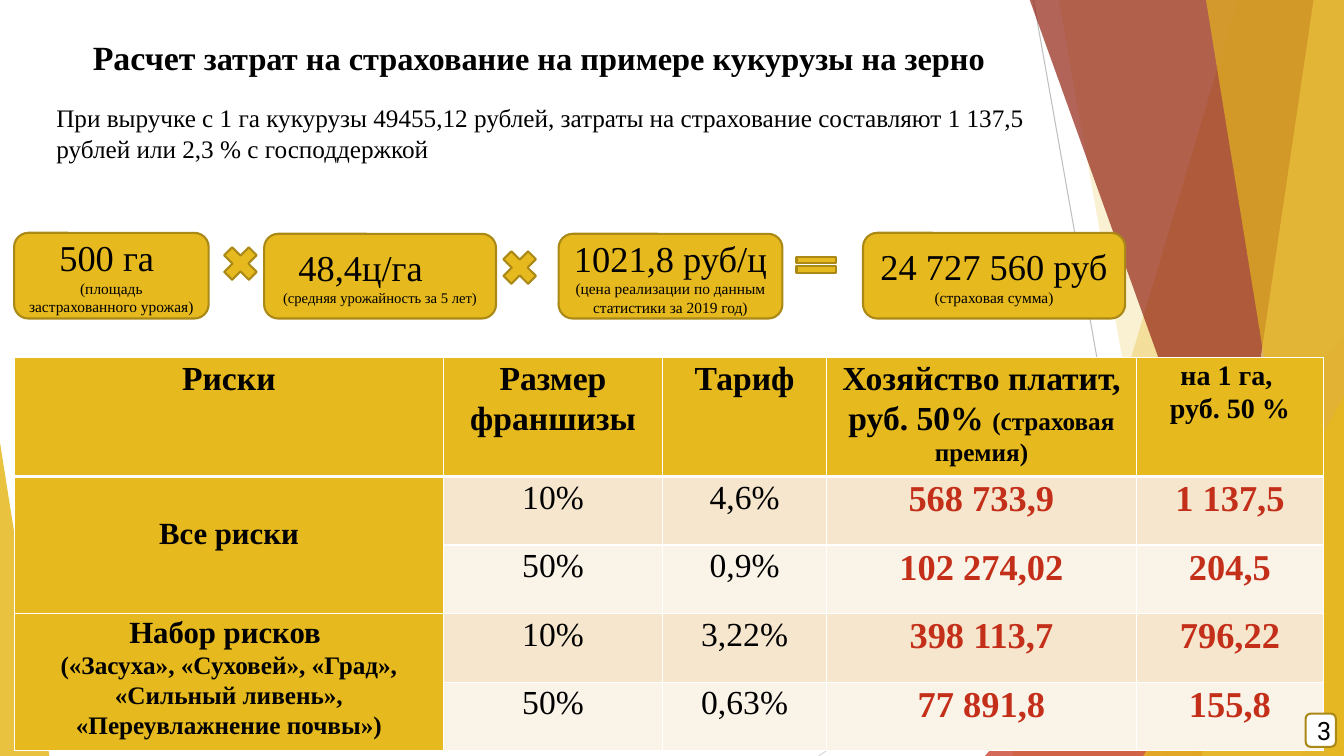
from lxml import etree
from pptx import Presentation
from pptx.dml.color import RGBColor
from pptx.enum.shapes import MSO_CONNECTOR, MSO_SHAPE
from pptx.enum.text import MSO_ANCHOR, PP_ALIGN
from pptx.oxml.ns import qn
from pptx.util import Inches, Pt

# Content
GOLD, DARK_GOLD, RED, BLACK, WHITE = "E6B91E", "AA8916", "C42F1A", "000000", "FFFFFF"
SERIF = "Times New Roman"
TOP, BOTTOM, RIGHT = -0.01, 7.5, 13.33

lines = [((10.25, 0), (11.58, 7.5), "BFBFBF"), ((13.33, 4.03), (8.12, 7.5), "D9D9D9")]
# Bands reach the right edge: (top x, bottom x, colour, opacity);
# triangles: (left, top, width, height, apex, colour, opacity)
decorations = [
    ("band", (12.28, 10.04, GOLD, 30)),
    ("band", (10.5, 11.83, GOLD, 20)),
    ("triangle", (9.77, 3.33, 3.56, 4.17, 1, RED, 72)),
    ("band", (10.21, 12.91, "932313", 70)),
    ("band", (13.03, 11.92, "F0D578", 70)),
    ("band", (11.96, 13.18, GOLD, 65)),
    ("triangle", (11.34, 3.93, 1.99, 3.57, 1, GOLD, 80)),
    ("triangle", (0, 4.39, 0.49, 3.11, 0, GOLD, 85)),
]

# Paragraphs are lists of (text, size, bold, colour)
summary = [[("При выручке с 1 га кукурузы 49455,12 рублей, затраты на страхование "
             "составляют 1 137,5 рублей или 2,3 % с господдержкой", 18, False, BLACK)]]
heading = [[("Расчет", 24.2, True, BLACK),
            (" затрат на страхование на примере кукурузы на зерно ", 23.1, True, BLACK)]]

factors = [
    ((0.14, 2.31, 1.93, 0.85), [[("500 га ", 26, False, BLACK)],
                                [("(площадь застрахованного урожая)", 11, False, BLACK)]]),
    ((2.62, 2.32, 2.3, 0.84), [[("48,4ц/га", 26, False, BLACK)],
                               [("(средняя урожайность за 5 лет)", 10.5, False, BLACK)]]),
    ((5.54, 2.32, 2.22, 0.84), [[("1021,8 руб/ц ", 26, False, BLACK),
                                 ("(цена реализации по данным статистики за 2019 год)",
                                  11, False, BLACK)]]),
    ((8.56, 2.31, 2.6, 0.85), [[("24 727 560 руб ", 26, False, BLACK),
                                ("(страховая сумма)", 11, False, BLACK)]]),
]
operators = [
    (MSO_SHAPE.MATH_EQUAL, (7.83, 2.49, 0.53, 0.27)),
    (MSO_SHAPE.MATH_MULTIPLY, (4.92, 2.42, 0.47, 0.47)),
    (MSO_SHAPE.MATH_MULTIPLY, (2.15, 2.38, 0.47, 0.47)),
]

column_widths = [4.26, 2.17, 1.63, 3.07, 1.86]
row_heights = [0.93] + [0.68] * 4
header = [
    [[("Риски", 24, True, BLACK)]],
    [[("Размер франшизы", 24, True, BLACK)]],
    [[("Тариф", 24, True, BLACK)]],
    [[("Хозяйство платит, руб. 50% ", 24, True, BLACK),
      ("(страховая премия)", 18, True, BLACK)]],
    [[("на 1 га, ", 20, True, BLACK)], [("руб. 50 %", 20, True, BLACK)]],
]
risks = [
    (0.38, [[("Все риски", 22, True, BLACK)]]),
    (0, [[("Набор рисков ", 22, True, BLACK)],
         [("(«Засуха», «Суховей», «Град», «Сильный ливень», «Переувлажнение почвы»)",
           18, True, BLACK)]]),
]
rates = [
    ("10%", "4,6%", "568 733,9", "1 137,5"),
    ("50%", "0,9%", "102 274,02", "204,5"),
    ("10%", "3,22%", "398 113,7", "796,22"),
    ("50%", "0,63%", "77 891,8", "155,8"),
]
row_fills = ["F5E6CD", "FAF3E8"]


# Helpers
def color(value):
    return RGBColor.from_string(value)


def place(values):
    return [Inches(value) for value in values]


def paint(shape, fill, line=None, opacity=100):
    shape.shadow.inherit = False
    shape.fill.solid()
    shape.fill.fore_color.rgb = color(fill)
    if opacity < 100:
        tint = shape.fill._xPr.find(qn("a:solidFill"))[0]
        etree.SubElement(tint, qn("a:alpha")).set("val", str(opacity * 1000))
    if line:
        shape.line.color.rgb = color(line)
        shape.line.width = Pt(1.5)
    else:
        shape.line.fill.background()


def write(frame, paragraphs, align=PP_ALIGN.CENTER, spacing=None, font=SERIF):
    frame.word_wrap = True
    for index, spans in enumerate(paragraphs):
        para = frame.paragraphs[0] if index == 0 else frame.add_paragraph()
        para.alignment = align
        if spacing:
            para.line_spacing = spacing
        for text, size, bold, ink in spans:
            span = para.add_run()
            span.text = text
            for name, value in {"name": font, "size": Pt(size), "bold": bold}.items():
                setattr(span.font, name, value)
            span.font.color.rgb = color(ink)


def add_text(position, paragraphs, align):
    box = page.shapes.add_textbox(*place(position))
    write(box.text_frame, paragraphs, align)


def add_box(position, fill, paragraphs, font=SERIF):
    box = page.shapes.add_shape(MSO_SHAPE.ROUNDED_RECTANGLE, *place(position))
    paint(box, fill, DARK_GOLD)
    box.text_frame.vertical_anchor = MSO_ANCHOR.MIDDLE
    write(box.text_frame, paragraphs, font=font)
    return box


def fill_cell(row, column, fill, paragraphs, top=0):
    cell = table.cell(row, column)
    margins = {"margin_left": 0.07, "margin_right": 0.07, "margin_top": top, "margin_bottom": 0}
    for name, value in margins.items():
        setattr(cell, name, Inches(value))
    properties = cell._tc.get_or_add_tcPr()
    for side in "LRTB":
        thick = (row, side) in ((0, "B"), (1, "T"))
        border = etree.SubElement(properties, qn(f"a:ln{side}"), w=str(Pt(3 if thick else 1)))
        solid = etree.SubElement(border, qn("a:solidFill"))
        etree.SubElement(solid, qn("a:srgbClr"), val=WHITE)
    cell.fill.solid()
    cell.fill.fore_color.rgb = color(fill)
    if paragraphs:
        write(cell.text_frame, paragraphs, spacing=1.07)


deck = Presentation()
deck.slide_width, deck.slide_height = Inches(13.33), Inches(7.5)
page = deck.slides.add_slide(deck.slide_layouts[6])

# Background facets
for start, end, ink in lines:
    line = page.shapes.add_connector(MSO_CONNECTOR.STRAIGHT, *place(start + end))
    line.line.color.rgb = color(ink)
    line.line.width = Pt(0.75)
    etree.SubElement(line._element.spPr, qn("a:effectLst"))

for kind, values in decorations:
    *geometry, fill, opacity = values
    if kind == "band":
        top_x, bottom_x = geometry
        builder = page.shapes.build_freeform(Inches(top_x), Inches(TOP))
        corners = [(RIGHT, TOP), (RIGHT, BOTTOM), (bottom_x, BOTTOM)]
        builder.add_line_segments([place(corner) for corner in corners], close=True)
        facet = builder.convert_to_shape()
    else:
        *position, apex = geometry
        facet = page.shapes.add_shape(MSO_SHAPE.ISOSCELES_TRIANGLE, *place(position))
        facet.adjustments[0] = apex
    paint(facet, fill, opacity=opacity)

# Summary, table of rates, heading
add_text((0.46, 0.97, 9.99, 0.72), summary, PP_ALIGN.LEFT)

table_frame = page.shapes.add_table(5, 5, *place((0.14, 3.55, 12.99, 3.89)))
table = table_frame.table
table.first_row = table.horz_banding = False
for column, width in zip(table.columns, column_widths):
    column.width = Inches(width)
for row, height in zip(table.rows, row_heights):
    row.height = Inches(height)
table_frame.height = Inches(3.89)

for column, paragraphs in enumerate(header):
    fill_cell(0, column, GOLD, paragraphs)
for row, values in enumerate(rates, 1):
    top, risk = risks[(row - 1) // 2]
    first = row % 2 == 1
    fill_cell(row, 0, GOLD, risk if first else None, top if first else 0)
    for column, value in enumerate(values, 1):
        style = (26, True, RED) if column > 2 else (24, False, BLACK)
        fill_cell(row, column, row_fills[(row - 1) % 2], [[(value, *style)]])
for row in (1, 3):
    table.cell(row, 0).merge(table.cell(row + 1, 0))

add_text((0.69, 0.31, 9.4, 0.45), heading, PP_ALIGN.CENTER)

# Formula for the insured sum
boxes = [add_box(position, GOLD, paragraphs) for position, paragraphs in factors]
yield_para = boxes[1].text_frame.paragraphs[0]
yield_para.alignment = PP_ALIGN.LEFT
yield_para._p.get_or_add_pPr().set("marL", str(Inches(0.2)))

for kind, position in operators:
    paint(page.shapes.add_shape(kind, *place(position)), GOLD, DARK_GOLD)

# Page number
add_box((12.95, 7.08, 0.3, 0.33), WHITE, [[("3", 18, False, BLACK)]], font="Roboto")

deck.save("out.pptx")
